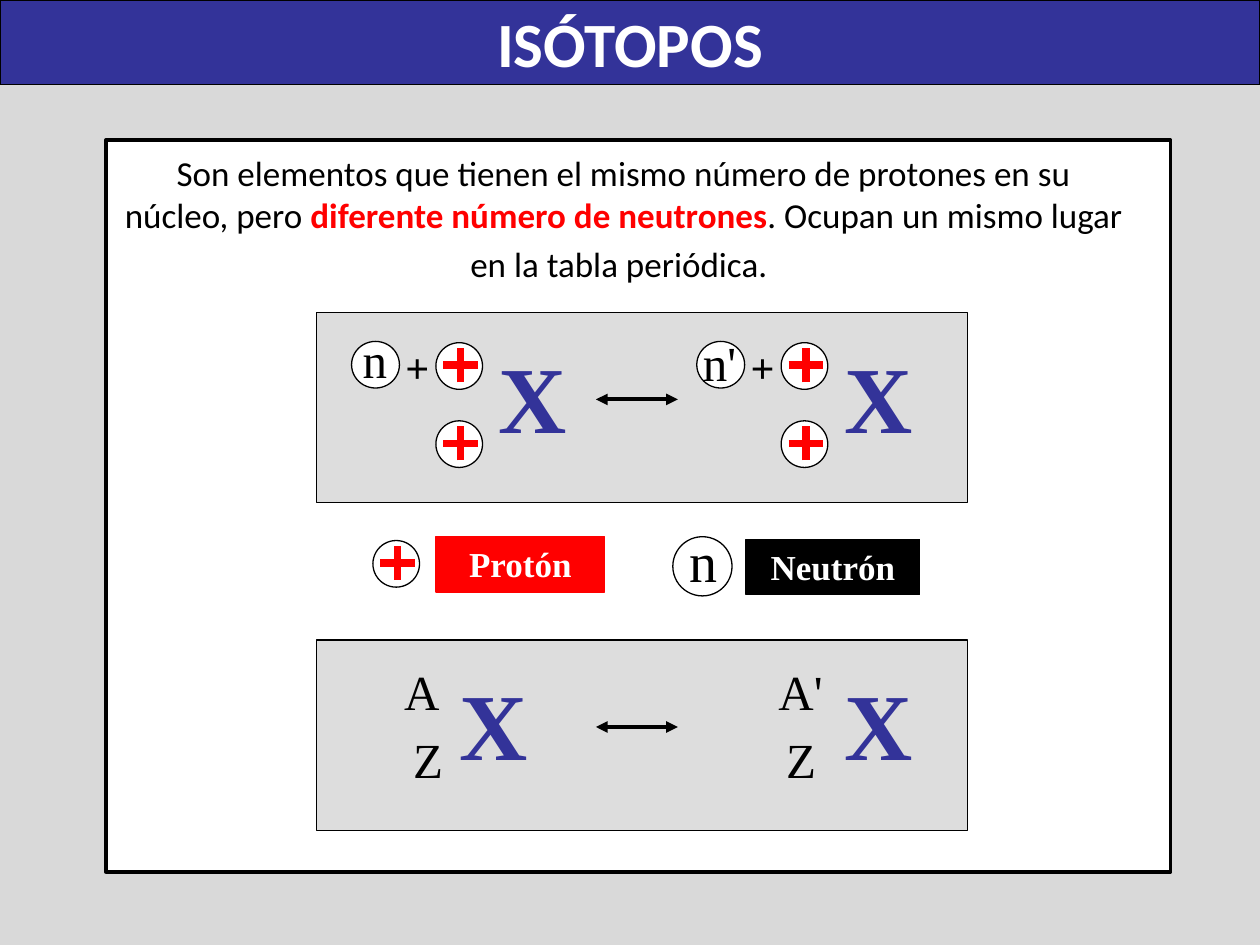
import pptx
import pptx.dml.color
import pptx.enum.shapes
import pptx.enum.text
import pptx.oxml
import pptx.oxml.ns
import pptx.util

Inches, Pt = pptx.util.Inches, pptx.util.Pt
SHAPE = pptx.enum.shapes.MSO_SHAPE
ALIGN = pptx.enum.text.PP_ALIGN
ANCHOR = pptx.enum.text.MSO_ANCHOR
AUTO_SIZE = pptx.enum.text.MSO_AUTO_SIZE

BLUE, RED, BLACK, WHITE, PANEL, GROUND = "333399", "FF0000", "000000", "FFFFFF", "DDDDDD", "D9D9D9"
SERIF, SANS = "Times New Roman", "Calibri"

heading = "ISÓTOPOS"
definition = [
    ("Son elementos que tienen el mismo número de protones en su núcleo, pero ", 20, BLACK, False),
    ("diferente número de neutrones", 20, RED, True),
    (". Ocupan un mismo lugar en la tabla periódica.", 20, BLACK, False),
    (" ", 24, BLACK, False),
]
panel_tops = [2.48, 5.08]
nuclei = [(2.79, "n", (2.78, 2.57)), (5.53, "n'", (5.48, 2.59))]
symbols = [(3.86, 2.64), (6.6, 2.64), (3.55, 5.24), (6.6, 5.24)]
numbers = [("A", 3.11, 5.2, 0.57), ("Z", 3.18, 5.74, 0.57),
           ("A'", 6.08, 5.2, 0.73), ("Z", 6.14, 5.74, 0.57)]
legend = [("Protón", (3.46, 4.26, 1.34, 0.44), RED),
          ("Neutrón", (5.92, 4.28, 1.38, 0.44), BLACK)]
PROTON = 0.37


def color(value):
    return pptx.dml.color.RGBColor.from_string(value)


def set_all(target, values):
    for key, value in values.items():
        setattr(target, key, value)


def paint(item, fill, line, width):
    item.fill.solid()
    item.fill.fore_color.rgb = color(fill)
    item.line.color.rgb = color(line)
    item.line.width = Pt(width)


def write(item, runs, font, align, anchor=ANCHOR.TOP, wrap=True, spaced=True):
    set_all(item.text_frame, {"word_wrap": wrap, "auto_size": AUTO_SIZE.NONE, "vertical_anchor": anchor})
    paragraph = item.text_frame.paragraphs[0]
    set_all(paragraph, {"alignment": align, "space_before": Pt(runs[0][1] * 0.1 if spaced else 0)})
    for text, size, ink, bold in runs:
        run = paragraph.add_run()
        run.text = text
        set_all(run.font, {"name": font, "size": Pt(size), "bold": bold})
        run.font.color.rgb = color(ink)


def add_box(kind, at, fill, line=BLACK, width=0.75):
    box = slide.shapes.add_shape(kind, *map(Inches, at))
    box.shadow.inherit = False
    paint(box, fill, line, width)
    return box


def add_label(text, at, size, ink=BLACK, bold=False):
    label = slide.shapes.add_textbox(*map(Inches, at))
    write(label, [(text, size, ink, bold)], SERIF, ALIGN.LEFT)


def add_line(start, end, ink, width, arrows=False):
    line = slide.shapes.add_connector(pptx.enum.shapes.MSO_CONNECTOR.STRAIGHT, *map(Inches, start + end))
    line.line.color.rgb = color(ink)
    line.line.width = Pt(width)
    if arrows:
        outline = line.line._get_or_add_ln()
        for tip in ("a:headEnd", "a:tailEnd"):
            pptx.oxml.ns.qn(tip)
            arrow = pptx.oxml.parse_xml(f'<{tip} {pptx.oxml.ns.nsdecls("a")} type="triangle"/>')
            outline.append(arrow)
    line._element.spPr.append(pptx.oxml.parse_xml(f'<a:effectLst {pptx.oxml.ns.nsdecls("a")}/>'))


def add_proton(left, top):
    add_box(SHAPE.OVAL, (left, top, PROTON, PROTON), WHITE)
    x, y, arm = left + 0.195, top + 0.18, 0.135
    add_line((x - arm, y), (x + arm, y), RED, 4.5)
    add_line((x, y + arm), (x, y - arm), RED, 4.5)


deck = pptx.Presentation()
set_all(deck, {"slide_width": Inches(10), "slide_height": Inches(7.5)})
slide = deck.slides.add_slide(deck.slide_layouts[5])
slide.background.fill.solid()
slide.background.fill.fore_color.rgb = color(GROUND)

title = slide.shapes.title
set_all(title, {"left": 0, "top": 0, "width": Inches(10), "height": Inches(0.67)})
paint(title, BLUE, BLACK, 0.75)
write(title, [(heading, 36, WHITE, True)], SANS, ALIGN.CENTER, ANCHOR.MIDDLE, False, False)

add_box(SHAPE.RECTANGLE, (0.84, 1.11, 8.45, 5.81), WHITE, width=2)
intro = slide.shapes.add_textbox(*map(Inches, (0.87, 1.15, 8.16, 1.17)))
write(intro, definition, SANS, ALIGN.CENTER)

for top in panel_tops:
    add_box(SHAPE.RECTANGLE, (2.51, top, 5.17, 1.51), PANEL)
    add_line((4.73, top + 0.69), (5.38, top + 0.69), BLACK, 2.25, arrows=True)

for left, neutron, corner in nuclei:
    add_box(SHAPE.OVAL, (left, 2.71, 0.38, 0.37), WHITE)
    add_label(neutron, corner + (0.55, 0.57), 28)
    add_label("+", (left + 0.33, 2.66, 0.36, 0.5), 24, bold=True)
    for top in (2.72, 3.34):
        add_proton(left + 0.67, top)

for corner in symbols:
    add_label("X", corner + (0.91, 1), 54, BLUE, True)

for text, left, top, width in numbers:
    add_label(text, (left, top, width, 0.57), 28)

add_proton(2.96, 4.29)
add_box(SHAPE.OVAL, (5.34, 4.26, 0.47, 0.47), WHITE)
add_label("n", (5.37, 4.13, 0.69, 0.64), 32)
for text, at, fill in legend:
    write(add_box(SHAPE.RECTANGLE, at, fill, fill), [(text, 20, WHITE, True)], SERIF, ALIGN.CENTER)

deck.save("out.pptx")
